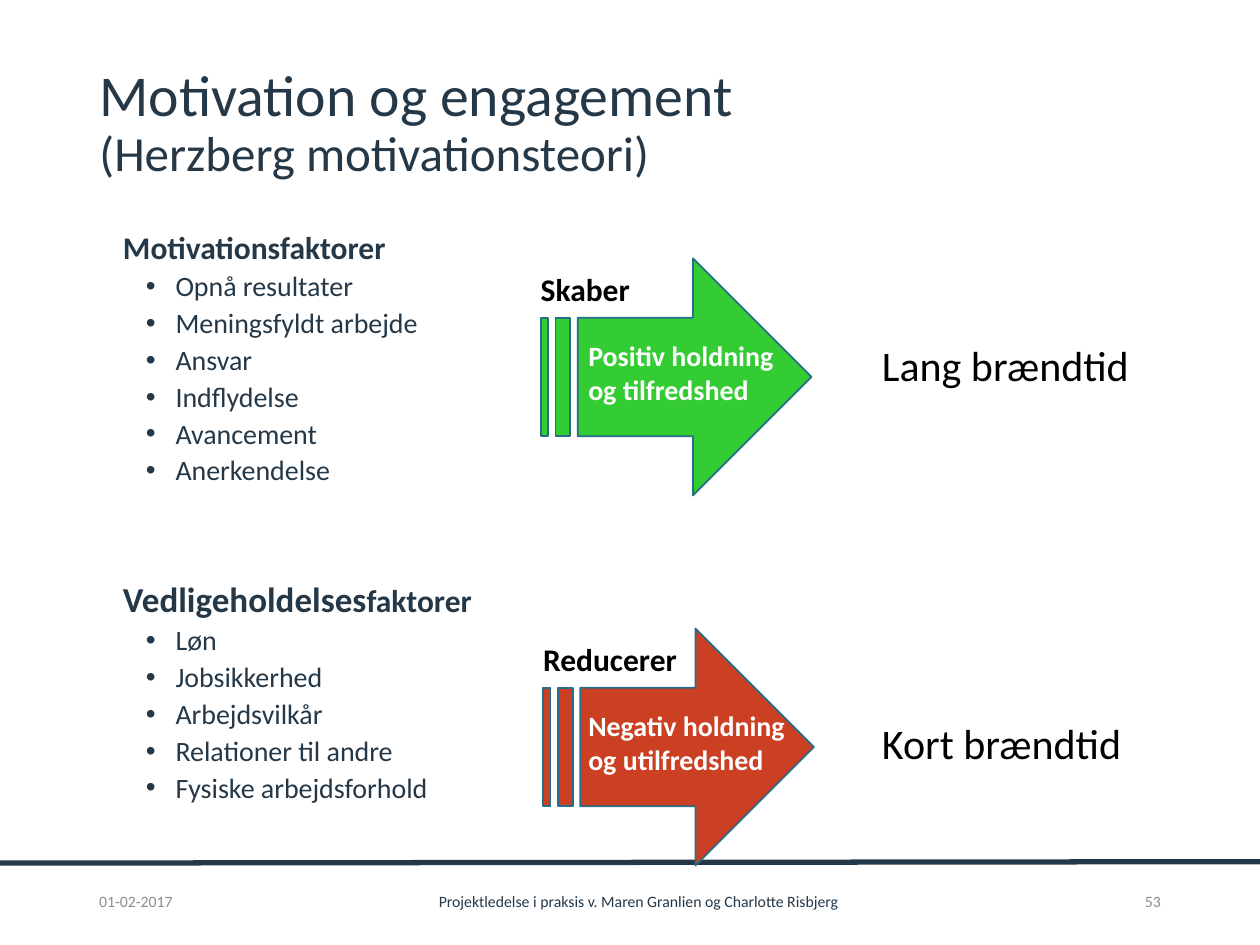
from lxml import etree
from pptx import Presentation
from pptx.dml.color import RGBColor
from pptx.enum import shapes, text
from pptx.oxml.ns import qn
from pptx.util import Cm, Pt

NAVY, GREY, BLACK, WHITE = "253848", "8C8C8C", "000000", "FFFFFF"
GREEN, RED, OUTLINE = "33CC33", "CB3F23", "266D8A"
LEFT_EDGE = 1.75


def colour(hex_code):
    return RGBColor.from_string(hex_code)


def set_font(font, size, hex_code, bold=False):
    font.name = "Calibri"
    font.size = Pt(size)
    font.bold = bold
    font.color.rgb = colour(hex_code)


def add_runs(paragraph, *pieces):
    """Add (wording, size) pieces to a paragraph as separate runs."""
    for wording, size in pieces:
        run = paragraph.add_run()
        run.text = wording
        run.font.size = Pt(size)


def add_frame(slide, left, top, width, height, wrap=True):
    box = slide.shapes.add_textbox(Cm(left), Cm(top), Cm(width), Cm(height))
    box.text_frame.word_wrap = wrap
    return box.text_frame


def add_label(slide, wording, place, size, hex_code, bold=False, wrap=False):
    frame = add_frame(slide, *place, wrap=wrap)
    frame.auto_size = text.MSO_AUTO_SIZE.SHAPE_TO_FIT_TEXT
    frame.text = wording
    set_font(frame.paragraphs[0].font, size, hex_code, bold)


def set_indent(paragraph, margin, hanging=0.0, bullet=None):
    properties = paragraph._p.get_or_add_pPr()
    properties.set("marL", str(Cm(margin)))
    properties.set("indent", str(-Cm(hanging)))
    if bullet:
        font = etree.SubElement(properties, qn("a:buFont"))
        font.set("typeface", "Arial")
        etree.SubElement(properties, qn("a:buChar")).set("char", bullet)


def add_title(slide):
    title = slide.shapes.title
    title.left, title.top = Cm(LEFT_EDGE), Cm(0.66)
    title.width, title.height = Cm(21.9), Cm(3.68)
    frame = title.text_frame
    frame.auto_size = text.MSO_AUTO_SIZE.NONE
    frame.vertical_anchor = text.MSO_ANCHOR.MIDDLE
    heading = frame.paragraphs[0]
    heading.alignment = text.PP_ALIGN.LEFT
    heading.line_spacing = 0.9
    set_font(heading.font, 33, NAVY)
    add_runs(heading, ("Motivation og engagement", 33))
    heading.add_line_break()
    add_runs(heading, ("(Herzberg motivationsteori)", 28))


def add_factors(slide, top, height, heading_pieces, factors):
    frame = add_frame(slide, LEFT_EDGE, top, 10.8, height)
    heading = frame.paragraphs[0]
    add_runs(heading, *heading_pieces)
    set_font(heading.font, 18, NAVY, bold=True)
    heading.line_spacing = 0.9
    heading.space_before = Pt(7.5)
    set_indent(heading, 0.48)
    for factor in factors:
        item = frame.add_paragraph()
        item.text = factor
        item.level = 1
        item.line_spacing = 0.9
        item.space_before = Pt(3.8)
        set_font(item.font, 16, NAVY)
        set_indent(item, 1.54, 0.6, "•")


def add_effect(slide, left, top, fill, verb, verb_width, attitude):
    """Add a striped arrow with a verb above its shaft and the attitude inside."""
    arrow = slide.shapes.add_shape(
        shapes.MSO_SHAPE.STRIPED_RIGHT_ARROW, Cm(left), Cm(top), Cm(5.46), Cm(4.78))
    arrow.shadow.inherit = False
    arrow.fill.solid()
    arrow.fill.fore_color.rgb = colour(fill)
    arrow.line.color.rgb = colour(OUTLINE)
    arrow.line.width = Pt(1)
    add_label(slide, attitude, (11.61, top + 1.49, 4.62, 1.63), 16, WHITE, True, wrap=True)
    add_label(slide, verb, (left - 0.25, top + 0.1, verb_width, 1.02), 18, BLACK, True)


def add_footer_rule(slide):
    rule = slide.shapes.add_connector(
        shapes.MSO_CONNECTOR.STRAIGHT, Cm(0), Cm(17.4), Cm(25.4), Cm(17.37))
    rule.line.color.rgb = colour(NAVY)
    rule.line.width = Pt(3)
    etree.SubElement(rule._element.spPr, qn("a:effectLst"))


def add_footer_text(slide, wording, left, width, alignment, hex_code):
    frame = add_frame(slide, left, 17.65, width, 1.02)
    frame.vertical_anchor = text.MSO_ANCHOR.MIDDLE
    frame.text = wording
    paragraph = frame.paragraphs[0]
    paragraph.alignment = alignment
    set_font(paragraph.font, 9, hex_code)


def main():
    deck = Presentation()
    deck.slide_width, deck.slide_height = Cm(25.4), Cm(19.05)
    slide = deck.slides.add_slide(deck.slide_layouts[5])

    add_footer_rule(slide)
    add_title(slide)
    align = text.PP_ALIGN
    add_footer_text(slide, "01-02-2017", LEFT_EDGE, 2.51, align.LEFT, GREY)
    add_footer_text(slide, "Projektledelse i praksis v. Maren Granlien og Charlotte Risbjerg",
                    4.5, 16.74, align.CENTER, NAVY)
    add_footer_text(slide, "53", 21.69, 1.96, align.RIGHT, GREY)

    add_factors(slide, 4.55, 6.5, [("Motivationsfaktorer", 18)],
                ["Opnå resultater", "Meningsfyldt arbejde", "Ansvar",
                 "Indflydelse", "Avancement", "Anerkendelse"])
    add_effect(slide, 10.9, 5.21, GREEN, "Skaber", 2.46, "Positiv holdning og tilfredshed")
    add_effect(slide, 10.95, 12.67, RED, "Reducerer", 3.23, "Negativ holdning og utilfredshed")
    add_factors(slide, 11.61, 5.6, [("Vedligeholdelses", 20), ("faktorer", 18)],
                ["Løn", "Jobsikkerhed", "Arbejdsvilkår",
                 "Relationer til andre", "Fysiske arbejdsforhold"])
    add_label(slide, "Lang brændtid", (17.53, 6.71, 5.64, 1.27), 24, BLACK)
    add_label(slide, "Kort brændtid", (17.53, 14.33, 5.51, 1.27), 24, BLACK)

    deck.save("out.pptx")


if __name__ == "__main__":
    main()
